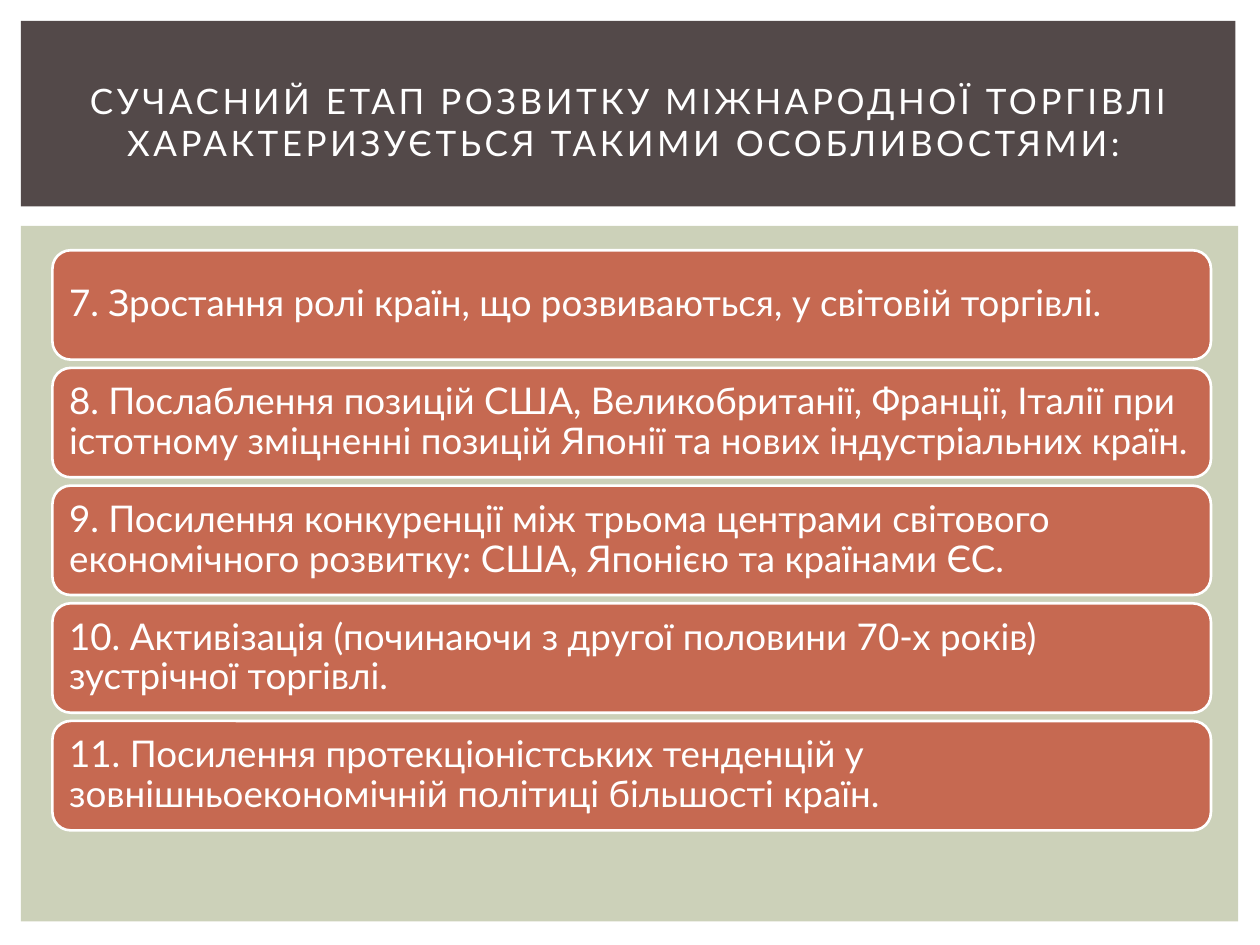
"""Build the slide on features of modern international trade."""
from pptx import Presentation
from pptx.dml.color import RGBColor
from pptx.enum.shapes import MSO_SHAPE
from pptx.enum.text import MSO_ANCHOR, MSO_AUTO_SIZE, PP_ALIGN
from pptx.util import Pt

COLORS = {"band": "534949", "panel": "CCD1B9", "card": "C66951", "white": "FFFFFF"}
FONT = "Lato"
TITLE = ("СУЧАСНИЙ ЕТАП РОЗВИТКУ МІЖНАРОДНОЇ ТОРГІВЛІ "
         "ХАРАКТЕРИЗУЄТЬСЯ ТАКИМИ ОСОБЛИВОСТЯМИ: ")
FEATURES = [
    "7. Зростання ролі країн, що розвиваються, у світовій торгівлі.",
    "8. Послаблення позицій США, Великобританії, Франції, Італії при "
    "істотному зміцненні позицій Японії та нових індустріальних країн.",
    "9. Посилення конкуренції між трьома центрами світового "
    "економічного розвитку: США, Японією та країнами ЄС.",
    "10. Активізація (починаючи з другої половини 70-х років) зустрічної торгівлі.",
    "11. Посилення протекціоністських тенденцій у "
    "зовнішньоекономічній політиці більшості країн.",
]
CARD_TOP, CARD_HEIGHT, CARD_PITCH = 143, 62.5, 67.25


def color(name):
    return RGBColor.from_string(COLORS[name])


def add_box(s, kind, left, top, width, height, fill):
    sp = s.shapes.add_shape(kind, Pt(left), Pt(top), Pt(width), Pt(height))
    sp.shadow.inherit = False
    sp.fill.solid()
    sp.fill.fore_color.rgb = color(fill)
    sp.line.fill.background()
    return sp


def set_text(tf, text, size, align):
    tf.word_wrap = True
    tf.auto_size = MSO_AUTO_SIZE.NONE
    tf.vertical_anchor = MSO_ANCHOR.MIDDLE
    tf.text = text
    p = tf.paragraphs[0]
    p.alignment = align
    p.font.name = FONT
    p.font.size = Pt(size)
    p.font.color.rgb = color("white")
    return p


def add_title(s):
    sp = s.shapes.title
    sp.left, sp.top, sp.width, sp.height = Pt(30), Pt(28), Pt(660), Pt(83)
    p = set_text(sp.text_frame, TITLE, 20, PP_ALIGN.CENTER)
    p._p.get_or_add_pPr().get_or_add_defRPr().set("spc", "200")


def add_card(s, top, text):
    sp = add_box(s, MSO_SHAPE.ROUNDED_RECTANGLE, 30, top, 662, CARD_HEIGHT, "card")
    sp.line.color.rgb = color("white")
    sp.line.width = Pt(1.5)
    tf = sp.text_frame
    tf.margin_left = tf.margin_right = tf.margin_top = tf.margin_bottom = Pt(6.5)
    set_text(tf, text, 21, PP_ALIGN.LEFT).line_spacing = 0.9


def main():
    prs = Presentation()
    prs.slide_width, prs.slide_height = Pt(720), Pt(540)
    s = prs.slides.add_slide(prs.slide_layouts[5])
    add_box(s, MSO_SHAPE.RECTANGLE, 12, 129, 695.5, 397.5, "panel")
    band = add_box(s, MSO_SHAPE.RECTANGLE, 12, 12, 694, 106, "band")
    s.shapes.title._element.addprevious(band._element)
    for i, text in enumerate(FEATURES):
        add_card(s, CARD_TOP + i * CARD_PITCH, text)
    add_title(s)
    prs.save("out.pptx")


if __name__ == "__main__":
    main()
